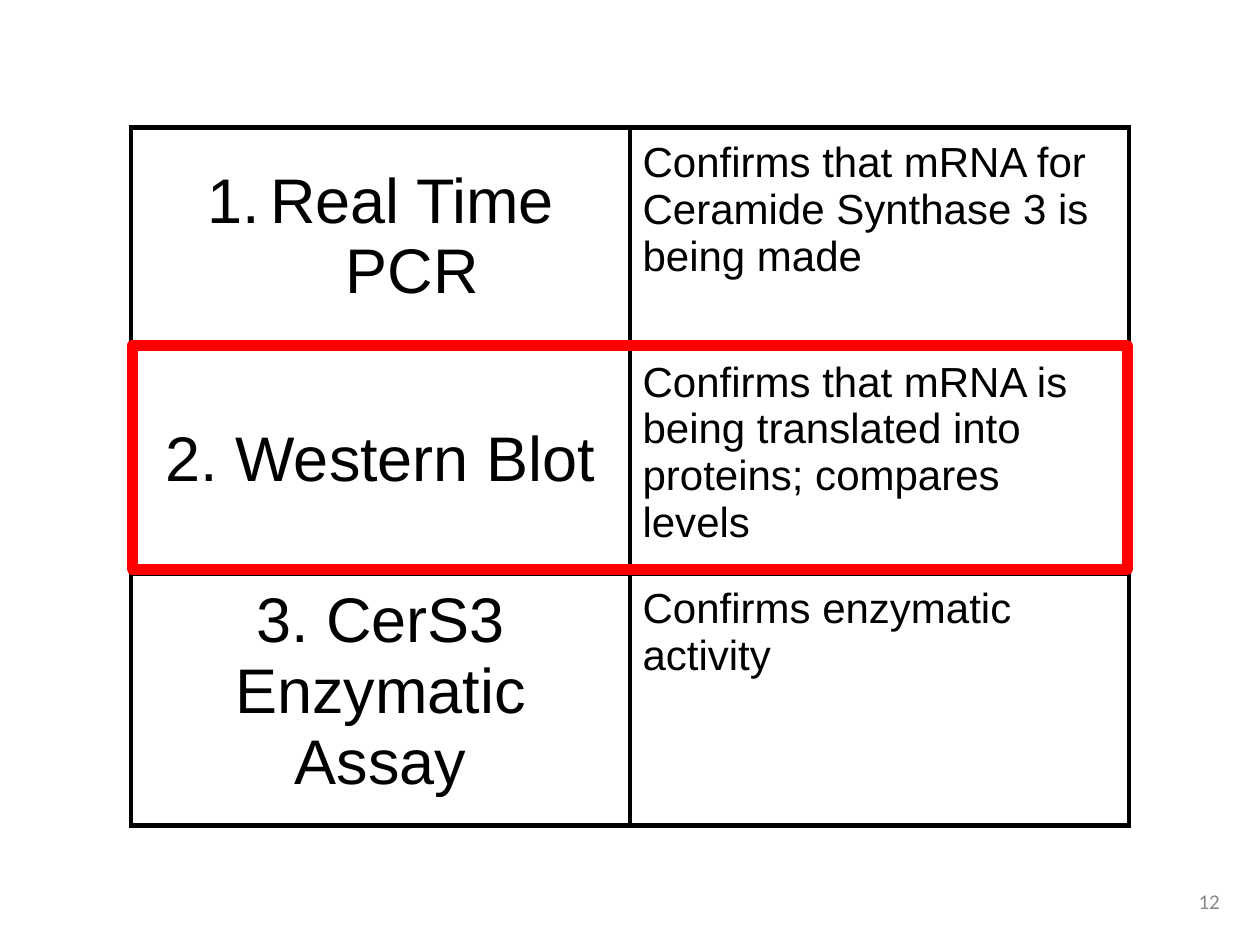
from lxml import etree
from pptx import Presentation
from pptx.dml.color import RGBColor
from pptx.enum.shapes import MSO_SHAPE
from pptx.enum.text import MSO_ANCHOR as ANCHOR, PP_ALIGN as ALIGN
from pptx.oxml.ns import qn
from pptx.util import Inches, Pt

TITLE = {"size": Pt(36), "name": "Arial"}
DETAIL = {"size": Pt(24), "name": "Arial"}
NUMBER = {"size": Pt(12), "name": "Calibri"}

ASSAYS = [
    ("Real Time PCR", "Confirms that mRNA for Ceramide Synthase 3 is being made"),
    ("2. Western Blot",
     "Confirms that mRNA is being translated into proteins; compares levels"),
    ("3. CerS3 Enzymatic Assay", "Confirms enzymatic activity"),
]


def rgb(color):
    """Turn a hex string into a colour."""
    return RGBColor.from_string(color)


def set_text(p, text, fmt, color, align):
    """Write one formatted run into a paragraph."""
    p.alignment = align
    r = p.add_run()
    r.text = text
    for key, value in fmt.items():
        setattr(r.font, key, value)
    r.font.color.rgb = rgb(color)


def number_paragraph(p, indent):
    """Give a paragraph automatic numbering with a hanging indent."""
    pPr = p._p.get_or_add_pPr()
    pPr.set("marL", str(indent))
    pPr.set("indent", str(-indent))
    etree.SubElement(pPr, qn("a:buFont"), typeface="+mj-lt")
    etree.SubElement(pPr, qn("a:buAutoNum"), type="arabicPeriod")


def set_borders(cell, color, width):
    """Draw a solid line on all four sides of a cell."""
    tcPr = cell._tc.get_or_add_tcPr()
    for i, side in enumerate(("lnL", "lnR", "lnT", "lnB")):
        ln = etree.Element(qn(f"a:{side}"), w=str(width))
        fill = etree.SubElement(ln, qn("a:solidFill"))
        etree.SubElement(fill, qn("a:srgbClr"), val=color)
        tcPr.insert(i, ln)


def fill_cell(cell, text, fmt, align, anchor):
    """Style a table cell and write its text."""
    cell.fill.background()
    set_borders(cell, "000000", Pt(3))
    for side in ("left", "right", "top", "bottom"):
        setattr(cell, f"margin_{side}", Inches(0.1))
    cell.vertical_anchor = anchor
    set_text(cell.text_frame.paragraphs[0], text, fmt, "000000", align)


def add_assay_table(s):
    """Add the table of assays and what each one confirms."""
    table = s.shapes.add_table(len(ASSAYS), 2, Inches(1.04), Inches(1.01),
                               Inches(7.92), Inches(5.22)).table
    table.first_row = table.horz_banding = False
    for i, (title, detail) in enumerate(ASSAYS):
        anchor = ANCHOR.TOP if i == len(ASSAYS) - 1 else ANCHOR.MIDDLE
        fill_cell(table.cell(i, 0), title, TITLE, ALIGN.CENTER, anchor)
        fill_cell(table.cell(i, 1), detail, DETAIL, ALIGN.LEFT, ANCHOR.TOP)
    number_paragraph(table.cell(0, 0).text_frame.paragraphs[0], Inches(0.5))


def add_highlight(s):
    """Frame the current assay in red."""
    sp = s.shapes.add_shape(MSO_SHAPE.RECTANGLE, Inches(1.05), Inches(2.74),
                            Inches(7.9), Inches(1.78))
    sp.shadow.inherit = False
    sp.fill.background()
    sp.line.color.rgb = rgb("FF0000")
    sp.line.width = Pt(6)


def add_page_number(s, number):
    """Add the page number at the lower right."""
    tf = s.shapes.add_textbox(Inches(7.45), Inches(6.95),
                              Inches(2.33), Inches(0.4)).text_frame
    tf.word_wrap = True
    tf.vertical_anchor = ANCHOR.MIDDLE
    set_text(tf.paragraphs[0], number, NUMBER, "888888", ALIGN.RIGHT)


def main():
    """Build and save the slide."""
    prs = Presentation()
    prs.slide_width, prs.slide_height = Inches(10), Inches(7.5)
    s = prs.slides.add_slide(prs.slide_layouts[6])
    add_page_number(s, "12")
    add_assay_table(s)
    add_highlight(s)
    prs.save("out.pptx")


if __name__ == "__main__":
    main()
